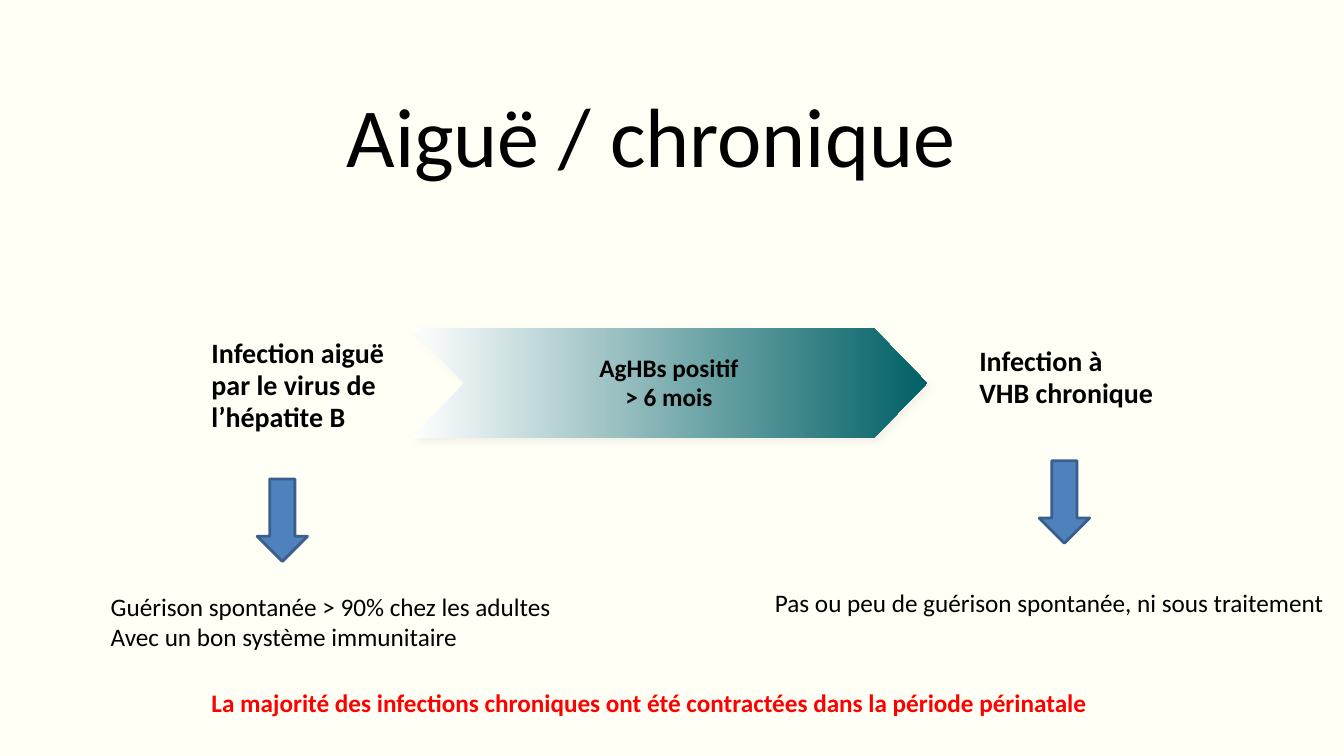
"""Build the slide comparing acute and chronic hepatitis B infection."""
from lxml import etree
from pptx import Presentation
from pptx import util as u
from pptx.dml.color import RGBColor
from pptx.enum import shapes, text
from pptx.oxml import parse_xml

BLACK, RED = "000000", "FF0000"
LEFT, CENTER = text.PP_ALIGN.LEFT, text.PP_ALIGN.CENTER
DRAWING = "http://schemas.openxmlformats.org/drawingml/2006/main"


def color(value):
    return RGBColor.from_string(value)


def write(frame, lines, size, ink=BLACK, bold=False, align=LEFT, spacing=None, before=None):
    for index, line in enumerate(lines):
        para = frame.add_paragraph() if index else frame.paragraphs[0]
        para.alignment = align
        para.line_spacing = spacing
        para.space_before = before
        span = para.add_run()
        span.text = line
        span.font.name = "Calibri"
        span.font.size = u.Pt(size)
        span.font.bold = bold
        span.font.color.rgb = color(ink)


deck = Presentation()
deck.slide_width, deck.slide_height = u.Cm(33.87), u.Cm(19.05)
page = deck.slides.add_slide(deck.slide_layouts[5])
page.background.fill.solid()
page.background.fill.fore_color.rgb = color("FFFFF6")

title = page.shapes.title
title.left, title.top, title.width, title.height = u.Cm(5.5), u.Cm(1.9), u.Cm(22.86), u.Cm(3.18)
title.text_frame.auto_size = text.MSO_AUTO_SIZE.NONE
title.text_frame.vertical_anchor = text.MSO_ANCHOR.MIDDLE
title.text_frame.margin_right = u.Cm(1.3)
write(title.text_frame, ["Aiguë / chronique"], 60, align=CENTER, spacing=0.96)

stages = [
    (5.08, 8.38, 5.92, 2.72, "Infection aiguë par le virus de l’hépatite B"),
    (24.43, 8.59, 5.0, 1.9, "Infection à VHB chronique"),
]
for left, top, width, height, label in stages:
    box = page.shapes.add_textbox(u.Cm(left), u.Cm(top), u.Cm(width), u.Cm(height))
    box.text_frame.word_wrap = True
    box.text_frame.auto_size = text.MSO_AUTO_SIZE.SHAPE_TO_FIT_TEXT
    write(box.text_frame, [label], 20, bold=True, spacing=0.96, before=u.Pt(15))

chevron = page.shapes.add_shape(
    shapes.MSO_SHAPE.CHEVRON, u.Cm(10.36), u.Cm(8.26), u.Cm(13), u.Cm(2.79))
chevron.adjustments[0] = 0.484
chevron.line.fill.background()
chevron.fill.gradient()
chevron.fill.gradient_angle = 0
for stop, position, shade in zip(chevron.fill.gradient_stops, (0, 1), ("FFFFFF", "006065")):
    stop.position = position
    stop.color.rgb = color(shade)
chevron.shadow.inherit = False
effects = chevron.element.spPr.find(f"{{{DRAWING}}}effectLst")
effects.append(parse_xml(
    f'<a:outerShdw xmlns:a="{DRAWING}" blurRad="{u.Pt(5)}" dist="{u.Pt(3)}" dir="2700000">'
    '<a:srgbClr val="EEECE1"><a:alpha val="75000"/></a:srgbClr></a:outerShdw>'))
chevron.text_frame.word_wrap = False
chevron.text_frame.vertical_anchor = text.MSO_ANCHOR.MIDDLE
write(chevron.text_frame, ["AgHBs positif", "> 6 mois"], 18, bold=True, align=CENTER, spacing=0.96)

for left, top in [(6.48, 12.07), (26.19, 11.61)]:
    arrow = page.shapes.add_shape(
        shapes.MSO_SHAPE.DOWN_ARROW, u.Cm(left), u.Cm(top), u.Cm(1.27), u.Cm(2.08))
    arrow.shadow.inherit = False
    arrow.fill.solid()
    arrow.fill.fore_color.rgb = color("4F81BD")
    arrow.line.color.rgb = color("3A5F8C")
    arrow.line.width = u.Pt(2)

outcomes = [
    (2.54, 14.78, 11.73, 1.8, BLACK, False,
     ["Guérison spontanée > 90% chez les adultes", "Avec un bon système immunitaire"]),
    (19.28, 14.68, 15.06, 1.02, BLACK, False,
     ["Pas ou peu de guérison spontanée, ni sous traitement"]),
    (5.08, 17.2, 22.89, 1.02, RED, True,
     ["La majorité des infections chroniques ont été contractées dans la période périnatale"]),
]
for left, top, width, height, ink, bold, lines in outcomes:
    box = page.shapes.add_textbox(u.Cm(left), u.Cm(top), u.Cm(width), u.Cm(height))
    box.text_frame.word_wrap = False
    box.text_frame.auto_size = text.MSO_AUTO_SIZE.SHAPE_TO_FIT_TEXT
    write(box.text_frame, lines, 18, ink, bold)

deck.save("out.pptx")
